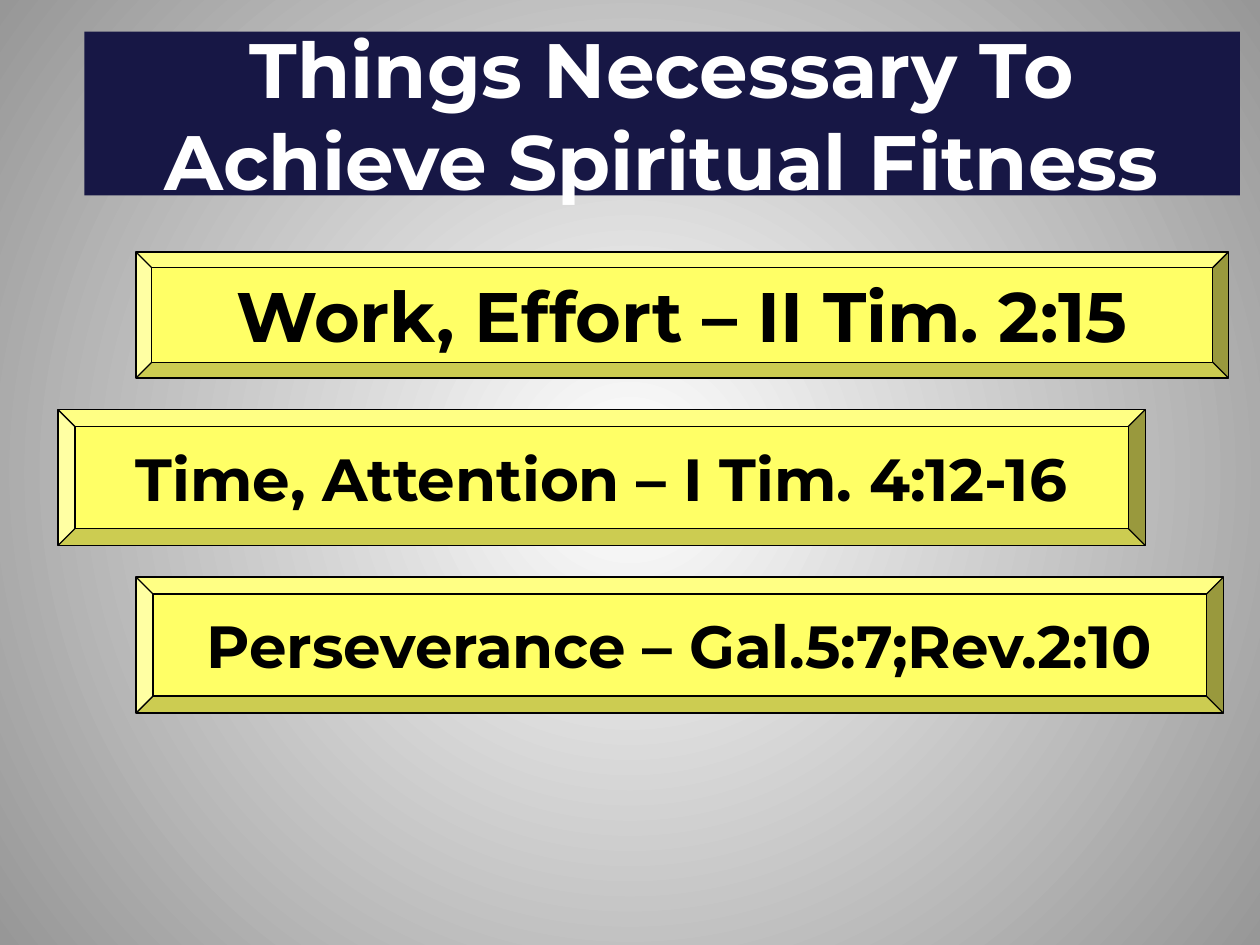
import pptx
import pptx.util
import pptx.dml.color
import pptx.enum.shapes
import pptx.enum.text
import pptx.oxml
import pptx.oxml.ns
from pptx.util import Inches
from pptx.dml.color import RGBColor

WHITE = RGBColor(0xFF, 0xFF, 0xFF)
BLACK = RGBColor(0, 0, 0)
GRAY = RGBColor(0x97, 0x97, 0x97)
NAVY = RGBColor(0x17, 0x17, 0x45)
YELLOW = RGBColor(0xFF, 0xFF, 0x66)
FONT = "Montserrat"

BARS = [
    ("Work, Effort – II Tim. 2:15", 1.08, 2, 8.67, 1, 40),
    ("Time, Attention – I Tim. 4:12-16", 0.46, 3.25, 8.63, 1.08, 34),
    ("Perseverance – Gal.5:7;Rev.2:10", 1.08, 4.58, 8.63, 1.08, 34),
]


def paint_back(slide):
    fill = slide.background.fill
    fill.gradient()
    for stop, color, place in zip(fill.gradient_stops, (WHITE, GRAY), (0, 1)):
        stop.color.rgb = color
        stop.position = place
    line = slide.element.find(".//" + pptx.oxml.ns.qn("a:lin"))
    focus = pptx.oxml.parse_xml(
        f'<a:path {pptx.oxml.ns.nsdecls("a")} path="circle">'
        '<a:fillToRect l="50000" t="50000" r="50000" b="50000"/></a:path>'
    )
    line.getparent().replace(line, focus)


def fill_shape(shape, color):
    shape.fill.solid()
    shape.fill.fore_color.rgb = color


def set_text(shape, text, size, color, wrap):
    frame = shape.text_frame
    frame.text = text
    frame.word_wrap = wrap
    frame.auto_size = pptx.enum.text.MSO_AUTO_SIZE.NONE
    frame.vertical_anchor = pptx.enum.text.MSO_ANCHOR.MIDDLE
    para = frame.paragraphs[0]
    para.alignment = pptx.enum.text.PP_ALIGN.CENTER
    para.font.name = FONT
    para.font.size = pptx.util.Pt(size)
    para.font.bold = True
    para.font.color.rgb = color


def add_title(slide, text):
    title = slide.shapes.title
    title.left, title.top = Inches(0.67), Inches(0.25)
    title.width, title.height = Inches(9.17), Inches(1.3)
    fill_shape(title, NAVY)
    set_text(title, text, 44, WHITE, True)


def add_bar(slide, text, left, top, width, height, size):
    bar = slide.shapes.add_shape(
        pptx.enum.shapes.MSO_SHAPE.BEVEL,
        Inches(left), Inches(top), Inches(width), Inches(height),
    )
    bar.shadow.inherit = False
    bar.adjustments[0] = 0.125
    fill_shape(bar, YELLOW)
    bar.line.color.rgb = BLACK
    bar.line.width = pptx.util.Pt(0.75)
    set_text(bar, text, size, BLACK, False)


def main():
    deck = pptx.Presentation()
    deck.slide_width, deck.slide_height = Inches(10), Inches(7.5)
    slide = deck.slides.add_slide(deck.slide_layouts[5])
    paint_back(slide)
    add_title(slide, "Things Necessary To Achieve Spiritual Fitness")
    for bar in BARS:
        add_bar(slide, *bar)
    deck.save("out.pptx")


if __name__ == "__main__":
    main()
